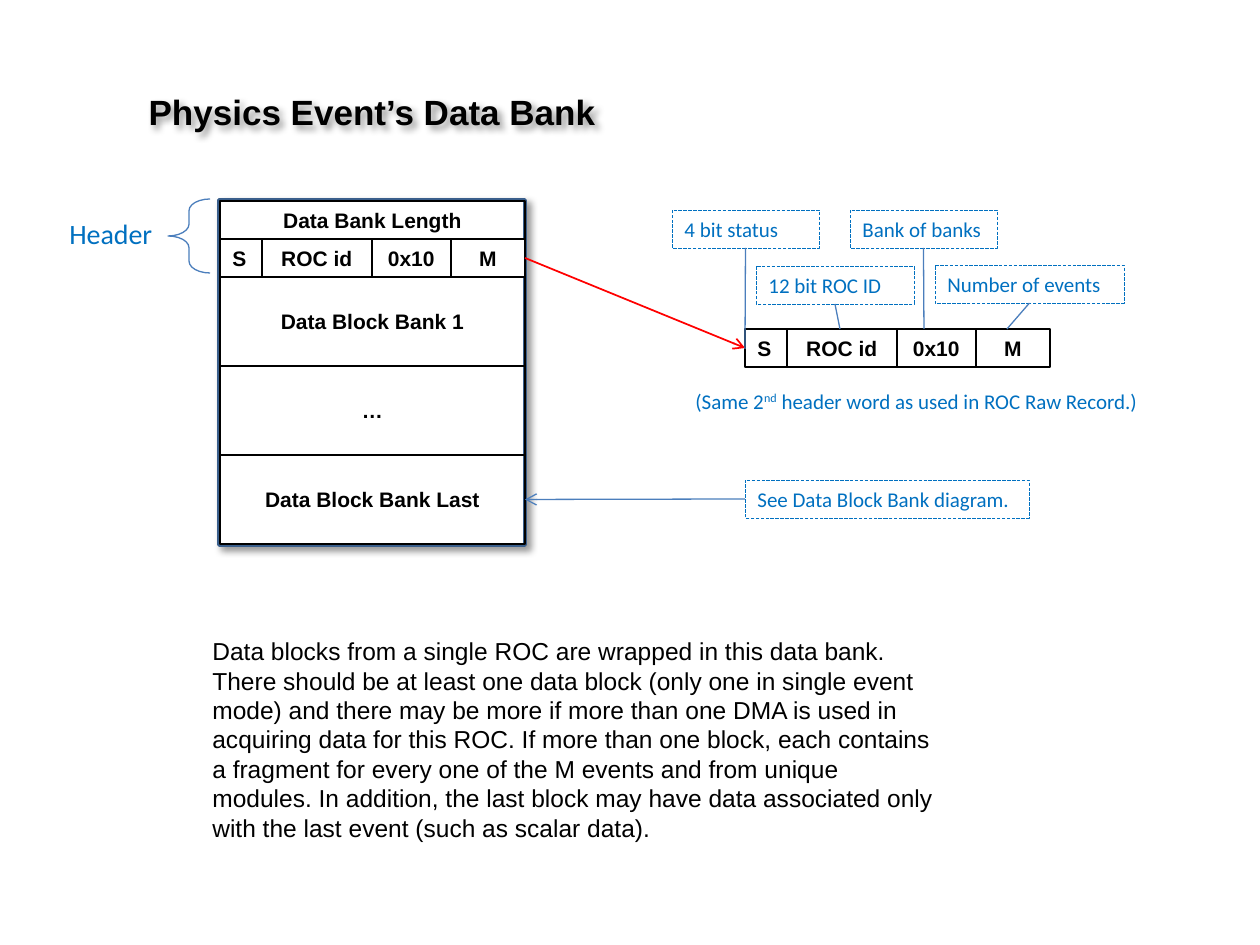
from dataclasses import dataclass

from lxml import etree
from pptx import Presentation
from pptx.dml.color import RGBColor
from pptx.enum.dml import MSO_LINE
from pptx.enum.shapes import MSO_CONNECTOR, MSO_SHAPE as Preset
from pptx.enum.text import MSO_ANCHOR as Anchor, MSO_AUTO_SIZE as AutoSize, PP_ALIGN as Align
from pptx.oxml.ns import qn
from pptx.util import Pt

EMU_PER_PX = 914400 / 126
TOP, LEFT, BOTTOM, RIGHT = range(4)


def px(value):
    return round(value * EMU_PER_PX)


@dataclass(frozen=True)
class Theme:
    black: str = "000000"
    white: str = "FFFFFF"
    note: str = "0070C0"
    link: str = "4B7EBC"
    frame: str = "3A5F8C"
    accent: str = "FF0000"
    main_font: str = "Arial"
    note_font: str = "Calibri"
    title_size: int = 20
    header_size: int = 16
    body_size: int = 14
    label_size: int = 12


class DiagramSlide:
    def __init__(self, presentation, theme):
        self.theme = theme
        self.slide = presentation.slides.add_slide(presentation.slide_layouts[5])
        self.shapes = self.slide.shapes

    def title(self, text, box):
        shape = self.shapes.title
        shape.left, shape.top, shape.width, shape.height = map(px, box)
        self.set_text(shape, text, self.theme.title_size, bold=True)
        self.add_shadow(shape)

    def set_text(self, shape, text, size, bold=False, note=False,
                 align=Align.LEFT, anchor=Anchor.TOP):
        frame = shape.text_frame
        frame.word_wrap, frame.auto_size = True, AutoSize.NONE
        frame.vertical_anchor = anchor
        paragraph = frame.paragraphs[0]
        paragraph.text = text
        paragraph.alignment = align
        font = paragraph.font
        font.name = self.theme.note_font if note else self.theme.main_font
        font.size, font.bold = Pt(size), bold
        font.color.rgb = RGBColor.from_string(self.theme.note if note else self.theme.black)
        return paragraph

    def text(self, text, box, size, note=False):
        shape = self.shapes.add_textbox(*map(px, box))
        return self.set_text(shape, text, size, note=note)

    def outline(self, box, color, width, fill=None, preset=Preset.RECTANGLE, shapes=None):
        shape = (shapes or self.shapes).add_shape(preset, *map(px, box))
        shape.shadow.inherit = False
        if fill:
            shape.fill.solid()
            shape.fill.fore_color.rgb = RGBColor.from_string(fill)
        else:
            shape.fill.background()
        shape.line.color.rgb = RGBColor.from_string(color)
        shape.line.width = Pt(width)
        return shape

    def block(self, text, box):
        shape = self.outline(box, self.theme.black, 1.5)
        self.set_text(shape, text, self.theme.label_size, bold=True,
                      align=Align.CENTER, anchor=Anchor.MIDDLE)
        return shape

    def label(self, text, box, fill=None):
        shape = self.outline(box, self.theme.note, 0.25, fill)
        shape.line.dash_style = MSO_LINE.LONG_DASH
        self.set_text(shape, text, self.theme.label_size, note=True, anchor=Anchor.MIDDLE)
        return shape

    def line(self, start, end, color, width, arrow=False, shapes=None):
        connector = (shapes or self.shapes).add_connector(
            MSO_CONNECTOR.STRAIGHT, *map(px, (*start, *end)))
        connector.line.color.rgb = RGBColor.from_string(color)
        connector.line.width = Pt(width)
        properties = connector._element.spPr
        if arrow:
            etree.SubElement(properties.find(qn("a:ln")), qn("a:tailEnd"), type="arrow")
        etree.SubElement(properties, qn("a:effectLst"))
        return connector

    def join(self, source, side, target, target_side, color, width):
        connector = self.line((0, 0), (0, 0), color, width, arrow=True)
        connector.begin_connect(source, side)
        connector.end_connect(target, target_side)

    def header_word(self, fields, dividers, box):
        """One bordered word whose fields are centred between the dividers."""
        left, top, width, height = box
        group = self.shapes.add_group_shape().shapes
        word = self.outline(box, self.theme.black, 1.5, self.theme.white, shapes=group)
        paragraph = self.set_text(word, "\t".join(fields), self.theme.label_size,
                                  bold=True, anchor=Anchor.MIDDLE)
        tabs = etree.Element(qn("a:tabLst"))
        for start, end in zip(dividers, [*dividers[1:], width]):
            position = px((start + end) / 2) - word.text_frame.margin_left
            etree.SubElement(tabs, qn("a:tab"), pos=str(position), algn="ctr")
            self.line((left + start, top), (left + start, top + height),
                      self.theme.black, 1.5, shapes=group)
        paragraph._p.get_or_add_pPr().insert(0, tabs)
        return word

    def add_shadow(self, shape):
        shape.shadow.inherit = False
        effects = shape._element.spPr.find(qn("a:effectLst"))
        shadow = etree.SubElement(effects, qn("a:outerShdw"), blurRad=str(Pt(4)),
                                  dist=str(Pt(3)), dir="2700000", algn="tl", rotWithShape="0")
        color = etree.SubElement(shadow, qn("a:srgbClr"), val=self.theme.black)
        etree.SubElement(color, qn("a:alpha"), val="40000")


def main():
    presentation = Presentation()
    presentation.slide_width, presentation.slide_height = px(1260), px(945)
    theme = Theme()
    diagram = DiagramSlide(presentation, theme)
    diagram.title("Physics Event’s Data Bank", (136, 84, 483, 55))

    # Data bank: stacked rows in a shadowed frame
    bank_left, bank_top, bank_width, row, block = 220, 201, 305, 38, 89
    frame = diagram.outline((219, 200, 306, 345), theme.frame, 2, theme.white)
    diagram.add_shadow(frame)
    diagram.block("Data Bank Length", (bank_left, bank_top, bank_width, row))
    blocks_top = bank_top + 2 * row
    for index, text in enumerate(("Data Block Bank 1", "…", "Data Block Bank Last")):
        last_block = diagram.block(
            text, (bank_left, blocks_top + index * block, bank_width, block))

    # Second header word, in the bank and enlarged on the right
    fields, dividers = ("S", "ROC id", "0x10", "M"), (42, 152, 231)
    bank_word, detail_word = (
        diagram.header_word(fields, dividers, (left, top, bank_width, row))
        for left, top in ((bank_left, bank_top + row), (745, 329)))
    diagram.join(bank_word, RIGHT, detail_word, LEFT, theme.accent, 1)

    # Field labels and their pointers
    for text, left, top, width, target in (
            ("4 bit status", 672, 210, 147, (745, 349)),
            ("Bank of banks", 850, 210, 147, (924, 329)),
            ("12 bit ROC ID", 756, 266, 158, (840, 329)),
            ("Number of events", 935, 265, 189, (1007, 329))):
        label = diagram.label(text, (left, top, width, row), theme.white)
        pointer = diagram.line((left, top), target, theme.link, 0.75)
        pointer.begin_connect(label, BOTTOM)

    # Remark under the enlarged word
    remark = diagram.text("", (683, 382, 514, row), theme.label_size, note=True)
    for text, baseline in (("(Same 2", 0), ("nd", 30000),
                           (" header word as used in ROC Raw Record.)", 0)):
        run = remark.add_run()
        run.text = text
        if baseline:
            run._r.get_or_add_rPr().set("baseline", str(baseline))

    # Reference to the block diagram
    reference = diagram.label("See Data Block Bank diagram.", (745, 480, 284, row))
    diagram.join(reference, LEFT, last_block, RIGHT, theme.link, 0.75)

    # Header brace
    diagram.text("Header", (57, 210, 116, 47), theme.header_size, note=True)
    brace = diagram.outline((168, 199, 42, 74), theme.link, 0.75, preset=Preset.LEFT_BRACE)
    brace.adjustments[0] = 0.28

    # Explanation
    diagram.text(
        "Data blocks from a single ROC are wrapped in this data bank. There should be at "
        "least one data block (only one in single event mode) and there may be more if more "
        "than one DMA is used in acquiring data for this ROC. If more than one block, each "
        "contains a fragment for every one of the M events and from unique modules. In "
        "addition, the last block may have data associated only with the last event (such "
        "as scalar data).", (200, 630, 756, 220), theme.body_size)

    presentation.save("out.pptx")


if __name__ == "__main__":
    main()
